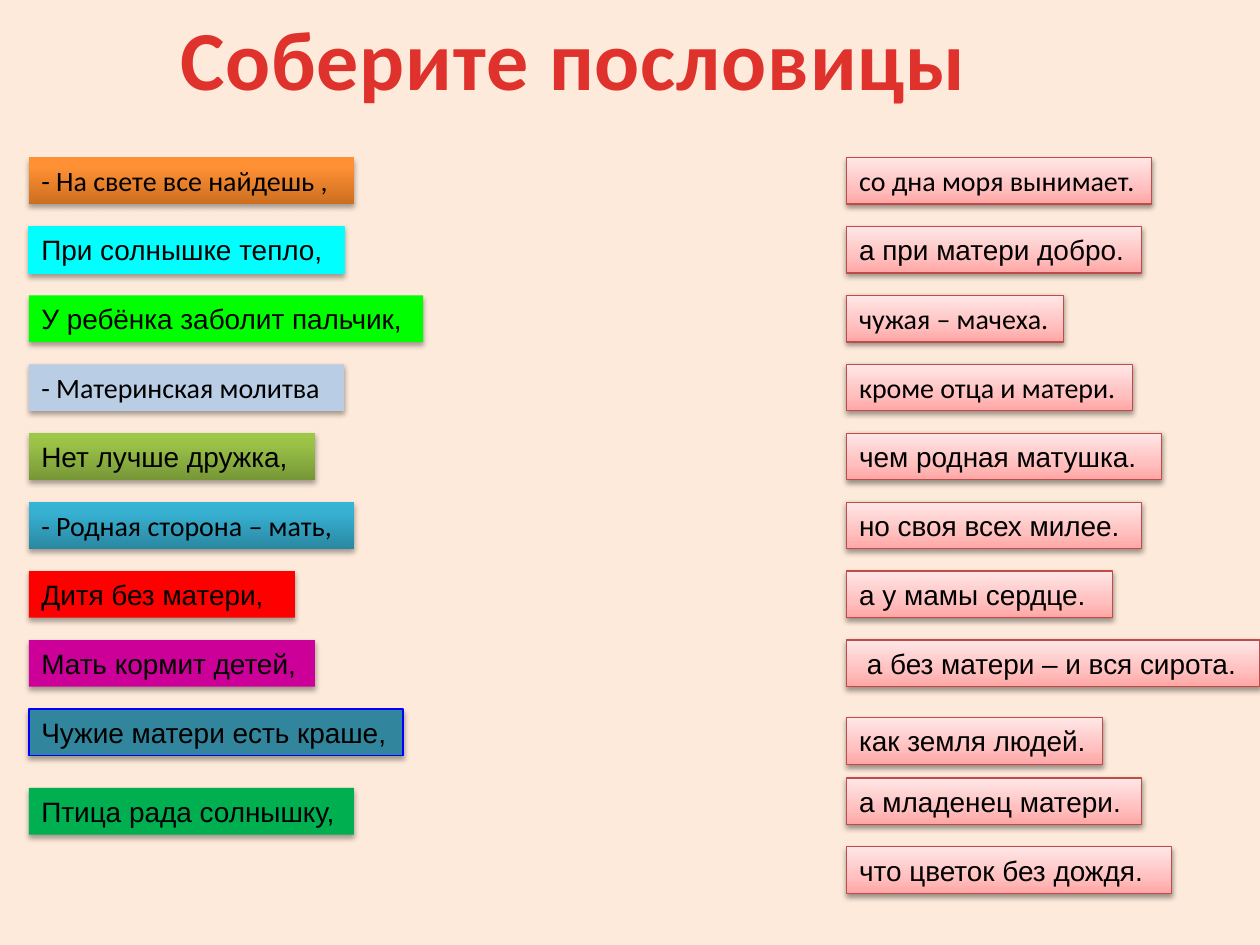
from lxml import etree
from pptx import Presentation
from pptx.dml.color import RGBColor
from pptx.enum.shapes import MSO_SHAPE
from pptx.enum.text import MSO_ANCHOR, MSO_AUTO_SIZE, PP_ALIGN
from pptx.oxml.ns import qn
from pptx.util import Inches, Pt

RECT = MSO_SHAPE.RECTANGLE
TOP = MSO_ANCHOR.TOP
LEFT = PP_ALIGN.LEFT
GROW = MSO_AUTO_SIZE.SHAPE_TO_FIT_TEXT
TITLE_ONLY = 5

BACKGROUND = RGBColor(0xFD, 0xEA, 0xDA)
TITLE_RED = RGBColor(0xE0, 0x32, 0x2D)
BLACK = RGBColor(0, 0, 0)
CYAN = RGBColor(0, 0xFF, 0xFF)
GREEN = RGBColor(0, 0xFF, 0)
PALE_BLUE = RGBColor(0xB9, 0xCD, 0xE5)
RED = RGBColor(0xFF, 0, 0)
MAGENTA = RGBColor(0xCC, 0, 0x99)
TEAL = RGBColor(0x31, 0x85, 0x9C)
BLUE = RGBColor(0, 0, 0xFF)
LEAF = RGBColor(0, 0xB0, 0x50)
PINK_LINE = RGBColor(0xBF, 0x4C, 0x48)

ORANGE_GRADIENT = [
    (0, RGBColor(0xCC, 0x6E, 0x20)),
    (80, RGBColor(0xFF, 0x90, 0x34)),
    (100, RGBColor(0xFF, 0x91, 0x36)),
]
OLIVE_GRADIENT = [
    (0, RGBColor(0x77, 0x97, 0x37)),
    (80, RGBColor(0x9B, 0xC3, 0x48)),
    (100, RGBColor(0x9D, 0xC7, 0x46)),
]
AQUA_GRADIENT = [
    (0, RGBColor(0x2A, 0x88, 0xA2)),
    (80, RGBColor(0x37, 0xB1, 0xD2)),
    (100, RGBColor(0x34, 0xB4, 0xD6)),
]
PINK_GRADIENT = [
    (0, RGBColor(0xFF, 0xA6, 0xA5)),
    (35, RGBColor(0xFF, 0xC0, 0xBF)),
    (100, RGBColor(0xFF, 0xE7, 0xE7)),
]

FIRST_TOP = 1.25
ROW_STEP = 3.83 / 7
CARD_HEIGHT = 0.37
BEGINNINGS_LEFT = 0.23
ENDINGS_LEFT = 6.72

BEGINNINGS = [
    ("- На свете все найдешь ,", 2.58, "Calibri", ORANGE_GRADIENT, None, 0),
    ("При солнышке тепло,", 2.5, "Arial", CYAN, CYAN, 0),
    ("У ребёнка заболит пальчик,", 3.13, "Arial", GREEN, None, 0),
    ("- Материнская молитва", 2.5, "Calibri", PALE_BLUE, None, 0),
    ("Нет лучше дружка,", 2.27, "Arial", OLIVE_GRADIENT, None, 0),
    ("- Родная сторона – мать,", 2.58, "Calibri", AQUA_GRADIENT, None, 0),
    ("Дитя без матери,", 2.11, "Arial", RED, None, 0),
    ("Мать кормит детей,", 2.27, "Arial", MAGENTA, None, 0),
    ("Чужие матери есть краше,", 2.97, "Arial", TEAL, BLUE, 0),
    ("Птица рада солнышку,", 2.58, "Arial", LEAF, None, 0.08),
]
ENDINGS = [
    ("со дна моря вынимает.", 2.42, "Calibri", 0),
    ("а при матери добро.", 2.34, "Arial", 0),
    ("чужая – мачеха.", 1.72, "Calibri", 0),
    ("кроме отца и матери.", 2.27, "Calibri", 0),
    ("чем родная матушка.", 2.5, "Arial", 0),
    ("но своя всех милее.", 2.34, "Arial", 0),
    ("а у мамы сердце.", 2.11, "Arial", 0),
    (" а без матери – и вся сирота.", 3.28, "Arial", 0),
    ("как земля людей.", 2.03, "Arial", 0.07),
    ("а младенец матери.", 2.34, "Arial", 0),
    ("что цветок без дождя.", 2.58, "Arial", 0),
]


def write_text(sp, text, *, font, size=16, color=BLACK, bold=False, spacing=None):
    tf = sp.text_frame
    tf.word_wrap = True
    tf.auto_size = GROW
    tf.vertical_anchor = TOP
    p = tf.paragraphs[0]
    p.alignment = LEFT
    r = p.add_run()
    r.text = text
    r.font.name = font
    r.font.size = Pt(size)
    r.font.bold = bold
    r.font.color.rgb = color
    if spacing is not None:
        r.font._element.set("spc", str(int(spacing * 100)))


def set_gradient(sp, stops):
    sp.fill.gradient()
    sp.fill.gradient_angle = 90
    gs_list = sp._element.spPr.find(qn("a:gradFill")).find(qn("a:gsLst"))
    for gs in list(gs_list):
        gs_list.remove(gs)
    for position, color in stops:
        gs = etree.SubElement(gs_list, qn("a:gs"), pos=str(position * 1000))
        etree.SubElement(gs, qn("a:srgbClr"), val=str(color))


def set_shadow(sp, *, opacity, distance, blur=3.1):
    sp.shadow.inherit = False
    effects = sp._element.spPr.find(qn("a:effectLst"))
    shadow = etree.SubElement(
        effects, qn("a:outerShdw"), blurRad=str(Pt(blur)), dist=str(Pt(distance)),
        dir="5400000", rotWithShape="0",
    )
    color = etree.SubElement(shadow, qn("a:srgbClr"), val=str(BLACK))
    etree.SubElement(color, qn("a:alpha"), val=str(opacity * 1000))


def add_card(s, row, left, text, width, font, fill, line, drop, opacity, distance):
    top = FIRST_TOP + row * ROW_STEP + drop
    sp = s.shapes.add_shape(
        RECT, Inches(left), Inches(top), Inches(width), Inches(CARD_HEIGHT)
    )
    if isinstance(fill, list):
        set_gradient(sp, fill)
    else:
        sp.fill.solid()
        sp.fill.fore_color.rgb = fill
    if line is None:
        sp.line.fill.background()
    else:
        sp.line.color.rgb = line
        sp.line.width = Pt(0.75)
    set_shadow(sp, opacity=opacity, distance=distance)
    write_text(sp, text, font=font)


def add_title(s, text):
    title = s.shapes.title
    title.left, title.top = Inches(1.33), Inches(0)
    title.width, title.height = Inches(7.03), Inches(0.91)
    write_text(title, text, font="Calibri", size=48, color=TITLE_RED,
               bold=True, spacing=0.5)


def main():
    prs = Presentation()
    prs.slide_width, prs.slide_height = Inches(10), Inches(7.5)
    s = prs.slides.add_slide(prs.slide_layouts[TITLE_ONLY])
    s.background.fill.solid()
    s.background.fill.fore_color.rgb = BACKGROUND
    add_title(s, "Cоберите пословицы")
    for row, (text, width, font, fill, line, drop) in enumerate(BEGINNINGS):
        add_card(s, row, BEGINNINGS_LEFT, text, width, font, fill, line, drop,
                 opacity=35, distance=1.8)
    for row, (text, width, font, drop) in enumerate(ENDINGS):
        add_card(s, row, ENDINGS_LEFT, text, width, font, PINK_GRADIENT, PINK_LINE,
                 drop, opacity=38, distance=1.6)
    prs.save("out.pptx")


if __name__ == "__main__":
    main()
